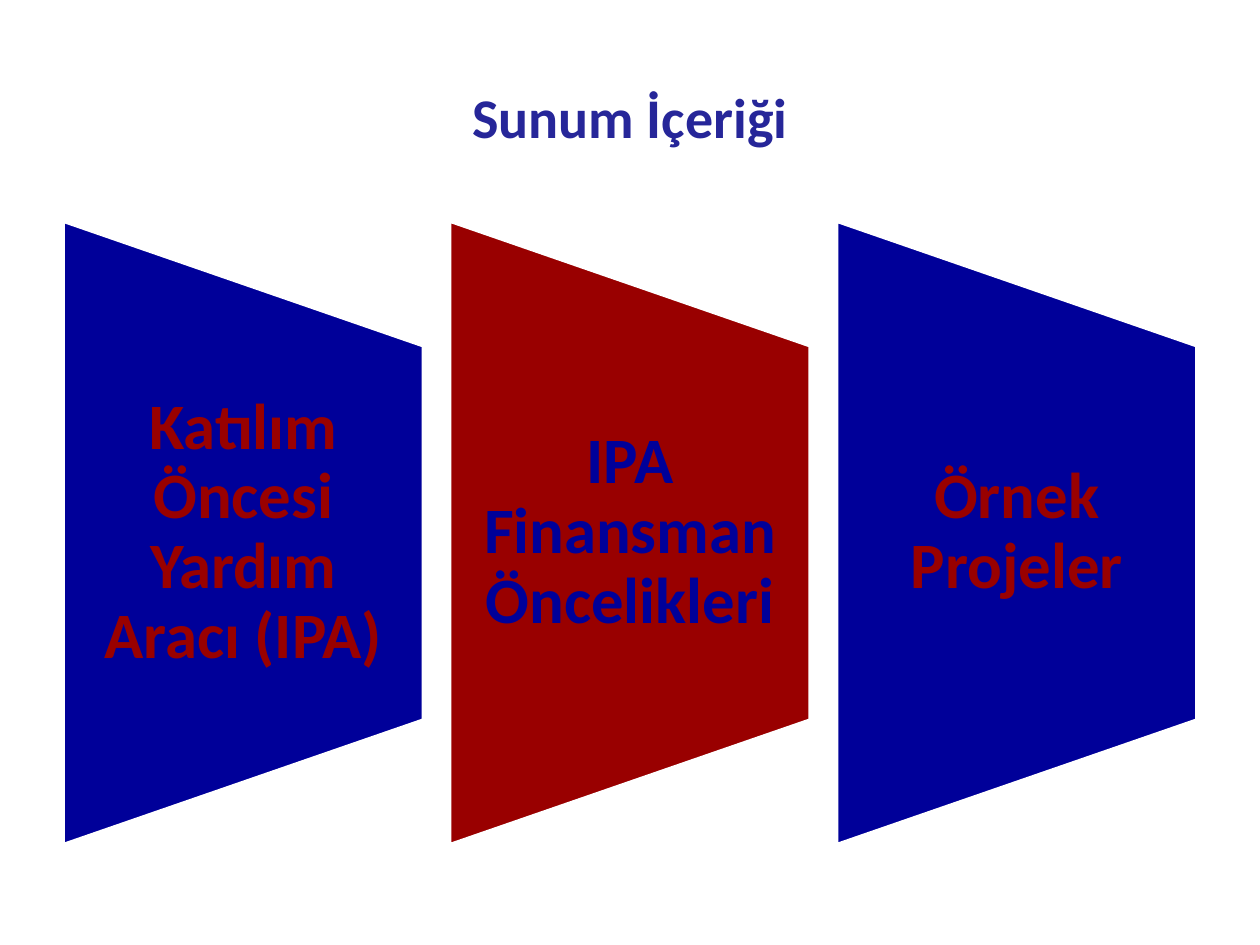
from dataclasses import dataclass

from pptx import Presentation
from pptx.dml.color import RGBColor
from pptx.enum import shapes, text
from pptx.util import Pt


@dataclass(frozen=True)
class Theme:
    font: str = "Calibri"
    title_size: int = 32
    panel_size: int = 37
    title: str = "262699"
    blue: str = "000099"
    red: str = "990000"
    outline: str = "FFFFFF"


THEME = Theme()

TOPICS = ["Katılım Öncesi Yardım Aracı (IPA)", "IPA Finansman Öncelikleri", "Örnek Projeler"]

PANELS_LEFT, PANELS_MIDDLE = 36, 304.5
PANEL_WIDTH, PANEL_HEIGHT, PANEL_GAP = 206, 356.4, 15
TOPIC_HEIGHT = 214


def add_label(slide, wording, left, top, width, height, size, color, side_inset=7.2):
    """Add centred bold text and return its paragraph."""
    label = slide.shapes.add_textbox(Pt(left), Pt(top), Pt(width), Pt(height))
    frame = label.text_frame
    frame.text = wording
    frame.word_wrap = True
    frame.vertical_anchor = text.MSO_ANCHOR.MIDDLE
    frame.margin_left = frame.margin_right = Pt(side_inset)
    frame.margin_top = frame.margin_bottom = 0
    paragraph = frame.paragraphs[0]
    paragraph.alignment = text.PP_ALIGN.CENTER
    font = paragraph.runs[0].font
    font.name, font.size, font.bold = THEME.font, Pt(size), True
    font.color.rgb = RGBColor.from_string(color)
    return paragraph


def add_panel(slide, left, fill):
    """Add a trapezoid turned on its side, so its long edge faces left."""
    center = left + PANEL_WIDTH / 2
    panel = slide.shapes.add_shape(
        shapes.MSO_SHAPE.FLOWCHART_MANUAL_OPERATION,
        Pt(center - PANEL_HEIGHT / 2), Pt(PANELS_MIDDLE - PANEL_WIDTH / 2),
        Pt(PANEL_HEIGHT), Pt(PANEL_WIDTH))
    panel.rotation = 270
    panel.shadow.inherit = False
    panel.fill.solid()
    panel.fill.fore_color.rgb = RGBColor.from_string(fill)
    panel.line.color.rgb = RGBColor.from_string(THEME.outline)
    panel.line.width = Pt(2)


def add_topic(slide, index, wording):
    left = PANELS_LEFT + index * (PANEL_WIDTH + PANEL_GAP)
    fill, ink = (THEME.red, THEME.blue) if index % 2 else (THEME.blue, THEME.red)
    add_panel(slide, left, fill)
    paragraph = add_label(slide, wording, left, PANELS_MIDDLE - TOPIC_HEIGHT / 2,
                          PANEL_WIDTH, TOPIC_HEIGHT, THEME.panel_size, ink, side_inset=18.7)
    paragraph.line_spacing = 0.9


def main():
    deck = Presentation()
    deck.slide_width, deck.slide_height = Pt(720), Pt(540)
    slide = deck.slides.add_slide(deck.slide_layouts[6])
    add_label(slide, "Sunum İçeriği", 36, 21.6, 648, 90, THEME.title_size, THEME.title)
    for index, wording in enumerate(TOPICS):
        add_topic(slide, index, wording)
    deck.save("out.pptx")


if __name__ == "__main__":
    main()
